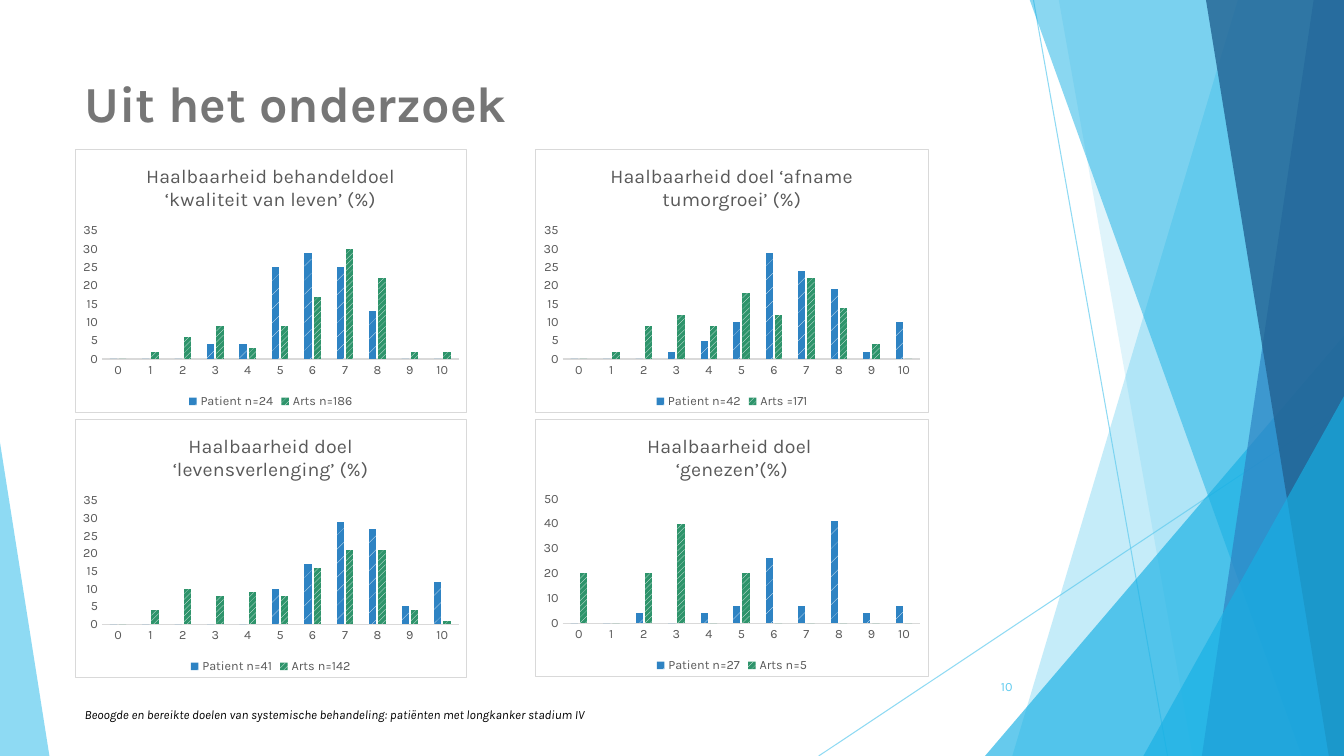
from lxml import etree
from pptx import Presentation
from pptx import util as u
from pptx.chart.data import CategoryChartData
from pptx.dml.color import RGBColor
from pptx.enum import chart as ch, dml, shapes, text
from pptx.oxml import parse_xml
from pptx.oxml.ns import nsdecls, qn

SKY = RGBColor(0x5F, 0xCB, 0xEF)
CYAN = RGBColor(0x17, 0xB0, 0xE4)
BLUE = RGBColor(0x2E, 0x83, 0xC3)
NAVY = RGBColor(0x22, 0x62, 0x92)
GREEN = RGBColor(0x2E, 0x94, 0x6B)
GRAY = RGBColor(0x76, 0x76, 0x76)
DARK = RGBColor(0x59, 0x59, 0x59)
PALE = RGBColor(0xD9, 0xD9, 0xD9)
BLACK = RGBColor(0, 0, 0)
WHITE = RGBColor(255, 255, 255)

WIDE, HIGH = 13.33, 7.5
TOP = -0.01


class Deck:
    """Hold the slide and its style, and draw each kind of element."""

    def __init__(self, font):
        self.font = font
        self.prs = Presentation()
        self.prs.slide_width = u.Inches(WIDE)
        self.prs.slide_height = u.Inches(HIGH)
        self.slide = self.prs.slides.add_slide(self.prs.slide_layouts[6])
        self.items = self.slide.shapes

    def style(self, font, size, color, bold=False, italic=False):
        font.name, font.size, font.color.rgb = self.font, u.Pt(size), color
        font.bold, font.italic = bold, italic

    def fade(self, shape, alpha):
        for tint in shape.element.iter(qn("a:srgbClr")):
            etree.SubElement(tint, qn("a:alpha")).set("val", str(alpha * 1000))

    def paint(self, shape, color, alpha):
        shape.shadow.inherit = False
        shape.fill.solid()
        shape.fill.fore_color.rgb = color
        shape.line.fill.background()
        self.fade(shape, alpha)

    def line(self, *ends):
        link = self.items.add_connector(
            shapes.MSO_CONNECTOR.STRAIGHT, *map(u.Inches, ends))
        link.line.color.rgb = SKY
        link.line.width = u.Pt(0.75)
        self.fade(link, 70)
        etree.SubElement(link.element.spPr, qn("a:effectLst"))

    def shard(self, top, base, color, alpha):
        pen = self.items.build_freeform(u.Inches(top), u.Inches(TOP))
        rest = [(WIDE, TOP), (WIDE, HIGH), (base, HIGH)]
        pen.add_line_segments(
            [(u.Inches(x), u.Inches(y)) for x, y in rest], close=True)
        self.paint(pen.convert_to_shape(), color, alpha)

    def wedge(self, box, tip, color, alpha):
        shape = self.items.add_shape(
            shapes.MSO_SHAPE.ISOSCELES_TRIANGLE, *map(u.Inches, box))
        shape.adjustments[0] = tip
        self.paint(shape, color, alpha)

    def text(self, words, box, size, color, align=text.PP_ALIGN.LEFT,
             anchor=text.MSO_ANCHOR.MIDDLE, **look):
        frame = self.items.add_textbox(*map(u.Inches, box)).text_frame
        frame.word_wrap = True
        frame.vertical_anchor = anchor
        para = frame.paragraphs[0]
        para.alignment = align
        run = para.add_run()
        run.text = words
        self.style(run.font, size, color, **look)

    def chart(self, title, box, peak, step, bars):
        data = CategoryChartData()
        data.categories = [str(n) for n in range(11)]
        for name, vals in bars:
            data.add_series(name, vals)
        chart = self.items.add_chart(
            ch.XL_CHART_TYPE.COLUMN_CLUSTERED, *map(u.Inches, box), data).chart
        self.style(chart.font, 10, BLACK)
        chart.has_title = True
        head = chart.chart_title.text_frame
        head.text = title
        for para in head.paragraphs:
            for run in para.runs:
                self.style(run.font, 14, DARK)
        chart.has_legend = True
        chart.legend.position = ch.XL_LEGEND_POSITION.BOTTOM
        chart.legend.include_in_layout = False
        self.style(chart.legend.font, 9, DARK)
        self.axes(chart, peak, step)
        self.bars(chart.plots[0])
        self.frame(chart)

    def axes(self, chart, peak, step):
        cat, val = chart.category_axis, chart.value_axis
        for axis in (cat, val):
            axis.has_major_gridlines = False
            axis.major_tick_mark = axis.minor_tick_mark = ch.XL_TICK_MARK.NONE
            self.style(axis.tick_labels.font, 9, DARK)
        cat.format.line.color.rgb = PALE
        cat.format.line.width = u.Pt(0.75)
        val.format.line.fill.background()
        val.minimum_scale, val.maximum_scale, val.major_unit = 0, peak, step

    def bars(self, plot):
        plot.gap_width, plot.overlap = 219, -27
        plot.vary_by_categories = False
        looks = [(dml.MSO_PATTERN.PERCENT_5, BLUE),
                 (dml.MSO_PATTERN.WIDE_UPWARD_DIAGONAL, GREEN)]
        for row, (pattern, color) in zip(plot.series, looks):
            row.invert_if_negative = False
            fill = row.format.fill
            fill.patterned()
            fill.pattern = pattern
            fill.fore_color.rgb, fill.back_color.rgb = WHITE, color

    def frame(self, chart):
        chart.element.find(qn("c:chart")).addnext(parse_xml(
            f'<c:spPr {nsdecls("c", "a")}>'
            f'<a:solidFill><a:srgbClr val="{WHITE}"/></a:solidFill>'
            f'<a:ln w="{u.Pt(0.75)}"><a:solidFill><a:srgbClr val="{PALE}"/>'
            '</a:solidFill></a:ln></c:spPr>'))


CHARTS = [
    ("Haalbaarheid behandeldoel ‘kwaliteit van leven’ (%)",
     (0.74, 1.48, 3.89, 2.62), 35, 5,
     [("Patient n=24", [0, 0, 0, 4, 4, 25, 29, 25, 13, 0, 0]),
      ("Arts n=186", [0, 2, 6, 9, 3, 9, 17, 30, 22, 2, 2])]),
    ("Haalbaarheid doel ‘afname tumorgroei’ (%)",
     (5.31, 1.48, 3.9, 2.62), 35, 5,
     [("Patient n=42", [0, 0, 0, 2, 5, 10, 29, 24, 19, 2, 10]),
      ("Arts =171", [0, 2, 9, 12, 9, 18, 12, 22, 14, 4, 0])]),
    ("Haalbaarheid doel ‘levensverlenging’ (%)",
     (0.74, 4.16, 3.89, 2.57), 35, 5,
     [("Patient n=41", [0, 0, 0, 0, 0, 10, 17, 29, 27, 5, 12]),
      ("Arts n=142", [0, 4, 10, 8, 9, 8, 16, 21, 21, 4, 1])]),
    ("Haalbaarheid doel \n‘genezen’(%)",
     (5.31, 4.16, 3.9, 2.56), 50, 10,
     [("Patient n=27", [0, 0, 4, 0, 4, 7, 26, 7, 41, 4, 7]),
      ("Arts n=5", [20, 0, 20, 40, 0, 20, 0, 0, 0, 0, 0])]),
]


def main():
    deck = Deck("Karla")
    deck.line(10.25, 0, 11.58, HIGH)
    deck.line(WIDE, 4.03, 8.12, HIGH)
    deck.shard(12.28, 10.04, SKY, 36)
    deck.shard(10.5, 11.83, SKY, 20)
    deck.wedge((9.77, 3.33, 3.56, 4.17), 1, CYAN, 66)
    deck.shard(10.21, 12.91, CYAN, 50)
    deck.shard(13.03, 11.92, BLUE, 70)
    deck.shard(11.96, 13.18, NAVY, 80)
    deck.wedge((11.34, 3.93, 1.99, 3.57), 1, CYAN, 66)
    deck.wedge((0, 4.39, 0.49, 3.11), 0, SKY, 70)
    deck.text("10", (9.39, 6.61, 0.75, 0.4), 9, SKY,
              align=text.PP_ALIGN.RIGHT)
    for item in CHARTS:
        deck.chart(*item)
    deck.text("Uit het onderzoek", (0.74, 0.67, 9.4, 1.44), 36, GRAY,
              anchor=text.MSO_ANCHOR.TOP, bold=True)
    deck.text("Beoogde en bereikte doelen van systemische behandeling: "
              "patiënten met longkanker stadium IV",
              (0.74, 6.89, 6.89, 0.4), 9, BLACK, italic=True)
    deck.prs.save("out.pptx")


if __name__ == "__main__":
    main()
